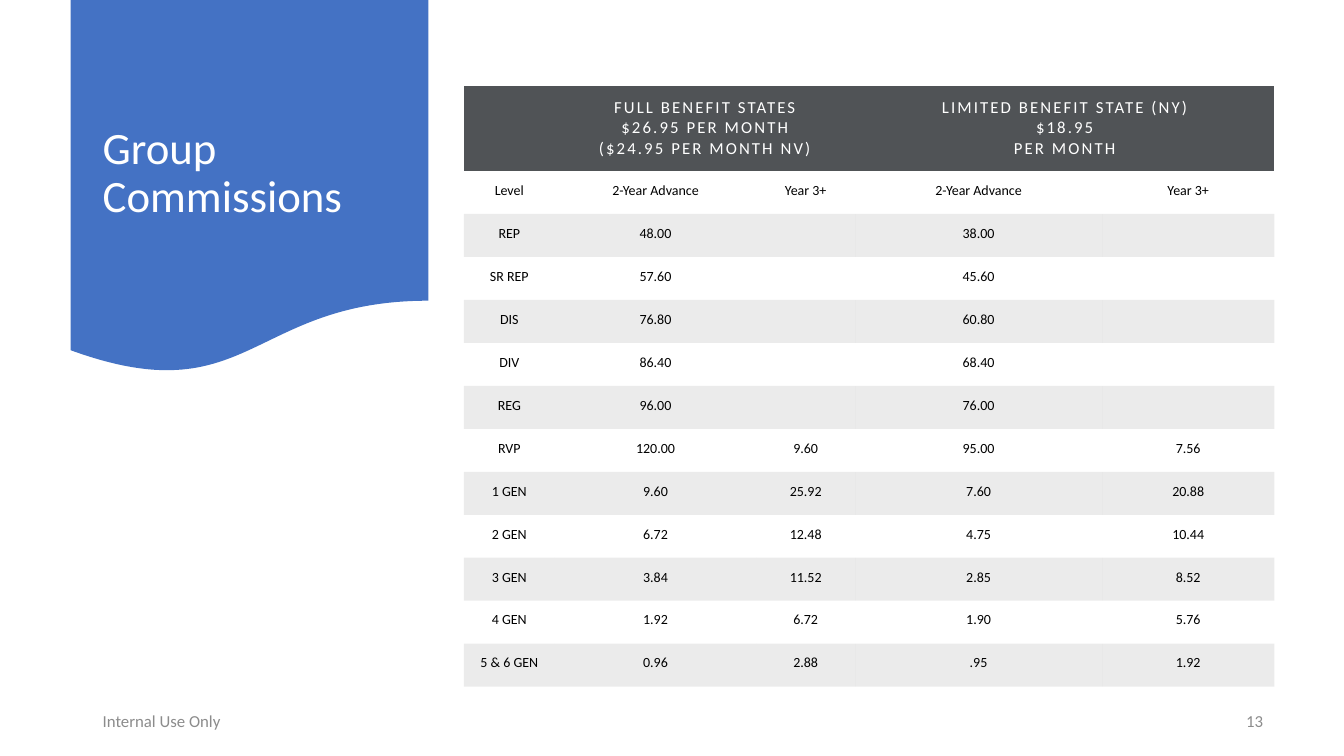
import pptx
import pptx.util
import pptx.dml.color
import pptx.enum.shapes
import pptx.enum.text
import lxml.etree
from dataclasses import dataclass

Pt = pptx.util.Pt
RGB = pptx.dml.color.RGBColor.from_string
ANCHOR = pptx.enum.text.MSO_ANCHOR
ALIGN = pptx.enum.text.PP_ALIGN

# Content
TITLE = "Group Commissions"
FOOTER = "Internal Use Only"
PAGE_NUMBER = "13"
PLANS = [
    ["FULL BENEFIT STATES", "$26.95 PER MONTH", "($24.95 PER MONTH NV)"],
    ["LIMITED BENEFIT STATE (NY)", "$18.95", "PER MONTH"],
]
ROWS = [
    ("Level", "2-Year Advance", "Year 3+", "2-Year Advance", "Year 3+"),
    ("REP", "48.00", "", "38.00", ""),
    ("SR REP", "57.60", "", "45.60", ""),
    ("DIS", "76.80", "", "60.80", ""),
    ("DIV", "86.40", "", "68.40", ""),
    ("REG", "96.00", "", "76.00", ""),
    ("RVP", "120.00", "9.60", "95.00", "7.56"),
    ("1 GEN", "9.60", "25.92", "7.60", "20.88"),
    ("2 GEN", "6.72", "12.48", "4.75", "10.44"),
    ("3 GEN", "3.84", "11.52", "2.85", "8.52"),
    ("4 GEN", "1.92", "6.72", "1.90", "5.76"),
    ("5 & 6 GEN", "0.96", "2.88", ".95", "1.92"),
]


@dataclass(frozen=True)
class Theme:
    font: str = "Calibri"
    blue: str = "4472C4"
    header: str = "505356"
    white: str = "FFFFFF"
    black: str = "000000"
    gray: str = "8C8C8C"
    band_alpha: int = 8
    title_size: int = 32
    header_size: int = 12
    footer_size: int = 12
    body_size: int = 10
    header_spacing: float = 1.5


T = Theme()

# Layout, in points
SLIDE_W, SLIDE_H = 960, 540
BANNER = (50.4, 0, 255.6, 267.84)
TITLE_BOX = (66.24, 13.68, 223.92, 186.48)
TITLE_DROP = 38.6
FOOTER_BOX = (66.24, 500.4, 469.44, 28.8)
PAGE_BOX = (860.4, 500.4, 48.96, 28.8)
TABLE_LEFT, TABLE_TOP = 331.4, 61.6
COLUMNS = [64.8, 144, 70.6, 176.4, 123.1]
HEADER_H, ROW_H = 60.5, 30.7
CELL_INSET = 7.9
PLAIN_TABLE = "{2D5ABB26-0587-4C30-8999-92F81FD0307C}"


def set_font(p, size, color):
    p.font.name = T.font
    p.font.size = Pt(size)
    p.font.color.rgb = RGB(color)


def add_label(s, box, text, size, color):
    tf = s.shapes.add_textbox(*map(Pt, box)).text_frame
    tf.word_wrap = True
    tf.vertical_anchor = ANCHOR.MIDDLE
    p = tf.paragraphs[0]
    p.text = text
    set_font(p, size, color)
    return tf


def fill_cell(cell, color, alpha=100):
    cell.fill.solid()
    cell.fill.fore_color.rgb = RGB(color)
    if alpha < 100:
        clr = cell._tc.tcPr.find(".//" + pptx.oxml.ns.qn("a:srgbClr"))
        lxml.etree.SubElement(clr, pptx.oxml.ns.qn("a:alpha"), val=str(alpha * 1000))


def write_cell(cell, lines, size, color, spacing=0):
    cell.margin_left = cell.margin_right = Pt(CELL_INSET)
    cell.margin_top = cell.margin_bottom = Pt(CELL_INSET)
    cell.text_frame.text = "\n".join(lines)
    for p in cell.text_frame.paragraphs:
        p.alignment = ALIGN.CENTER
        set_font(p, size, color)
        if spacing:
            p._p.pPr.get_or_add_defRPr().set("spc", str(int(spacing * 100)))


def add_commission_table(s):
    width, height = sum(COLUMNS), HEADER_H + ROW_H * len(ROWS)
    frame = s.shapes.add_table(len(ROWS) + 1, len(COLUMNS), Pt(TABLE_LEFT),
                               Pt(TABLE_TOP), Pt(width), Pt(height))
    table = frame.table
    table.first_row = table.horz_banding = False
    table._tbl.tblPr.find(pptx.oxml.ns.qn("a:tableStyleId")).text = PLAIN_TABLE
    for column, w in zip(table.columns, COLUMNS):
        column.width = Pt(w)
    for i, row in enumerate(table.rows):
        row.height = Pt(ROW_H if i else HEADER_H)

    # Header: each plan spans two columns
    for cell in table.rows[0].cells:
        fill_cell(cell, T.header)
    for i, lines in enumerate(PLANS):
        c = 1 + 2 * i
        table.cell(0, c).merge(table.cell(0, c + 1))
        write_cell(table.cell(0, c), lines, T.header_size, T.white, T.header_spacing)

    # Body: every second row is shaded
    for r, values in enumerate(ROWS, 1):
        for c, value in enumerate(values):
            cell = table.cell(r, c)
            write_cell(cell, [value], T.body_size, T.black)
            if r % 2 == 0:
                fill_cell(cell, T.black, T.band_alpha)
            else:
                cell.fill.background()


def main():
    prs = pptx.Presentation()
    prs.slide_width, prs.slide_height = Pt(SLIDE_W), Pt(SLIDE_H)
    s = prs.slides.add_slide(prs.slide_layouts[6])

    # Banner and title
    sp = s.shapes.add_shape(pptx.enum.shapes.MSO_SHAPE.FLOWCHART_DOCUMENT, *map(Pt, BANNER))
    sp.shadow.inherit = False
    sp.fill.solid()
    sp.fill.fore_color.rgb = RGB(T.blue)
    sp.line.fill.background()
    tf = add_label(s, TITLE_BOX, TITLE, T.title_size, T.white)
    tf.margin_top = Pt(TITLE_DROP)
    tf.paragraphs[0].line_spacing = 0.9

    # Footer
    add_label(s, FOOTER_BOX, FOOTER, T.footer_size, T.gray)
    tf = add_label(s, PAGE_BOX, PAGE_NUMBER, T.footer_size, T.gray)
    tf.paragraphs[0].alignment = ALIGN.RIGHT

    add_commission_table(s)
    prs.save("out.pptx")


if __name__ == "__main__":
    main()
